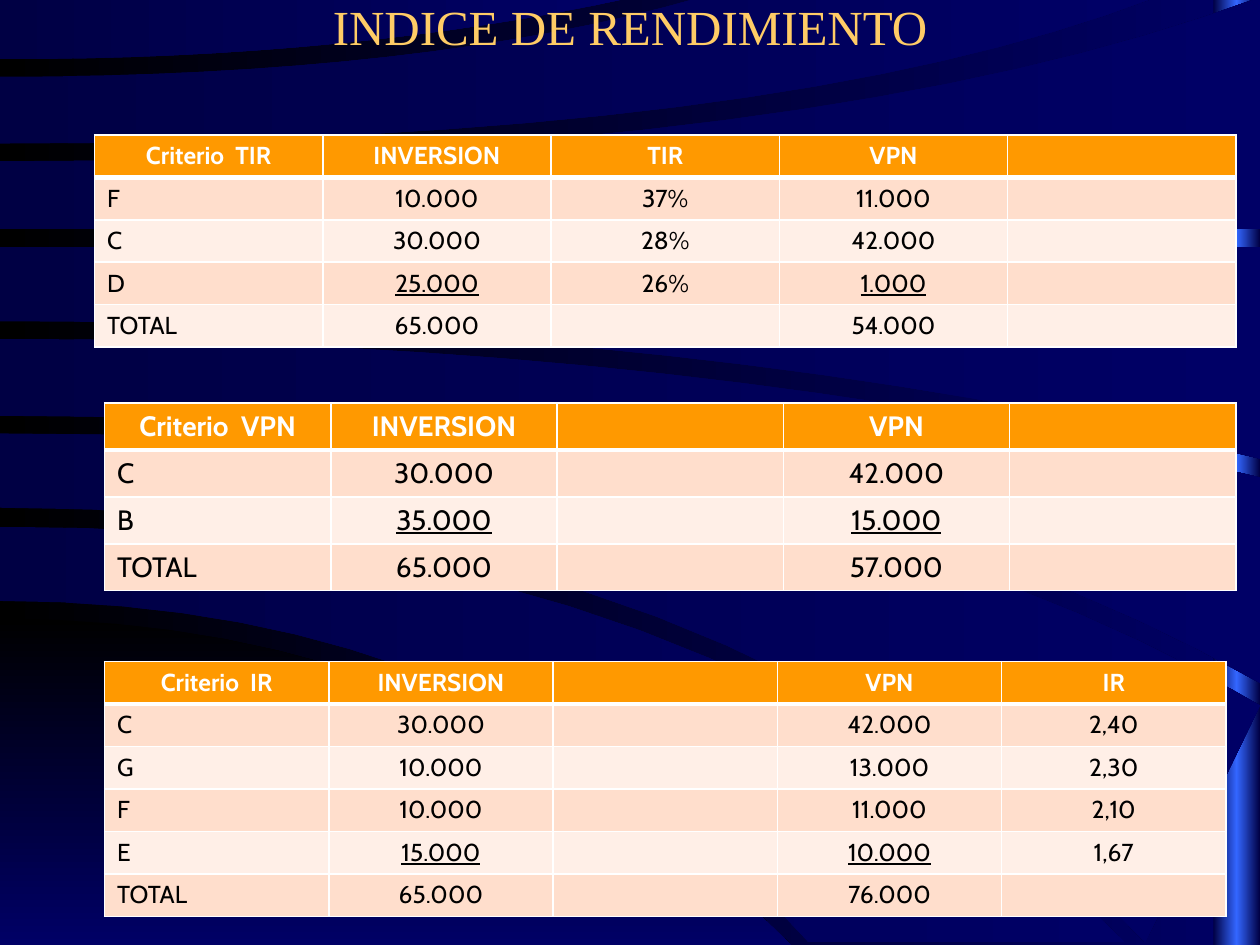
from copy import deepcopy
from lxml.etree import SubElement
from pptx import Presentation
from pptx.dml.color import RGBColor
from pptx.enum.shapes import MSO_SHAPE
from pptx.enum.text import MSO_ANCHOR, PP_ALIGN
from pptx.oxml.ns import qn
from pptx.util import Inches, Pt

COLORS = {
    "black": "000000", "navy": "000044", "deep": "000066", "glow": "3366FF",
    "gold": "FFCC66", "header": "FF9900", "band": "FFDECC", "light": "FFEFE7",
    "white": "FFFFFF",
}
STEPS = 16


def set_gradient(fill, names, angle=0):
    fill.gradient()
    fill.gradient_angle = angle
    stops = fill.gradient_stops
    for i, name in enumerate(names):
        stops[i].color.rgb = RGBColor.from_string(COLORS[name])
        stops[i].position = i / (len(names) - 1)


def arc(start_y, bend_x, end_x, end_y):
    points = []
    for i in range(STEPS + 1):
        t = i / STEPS
        x = 2 * t * (1 - t) * bend_x + t * t * end_x
        y = start_y + t * t * (end_y - start_y)
        points.append((Inches(x), Inches(y)))
    return points


prs = Presentation()
prs.slide_width, prs.slide_height = Inches(10), Inches(7.5)
s = prs.slides.add_slide(prs.slide_layouts[5])
set_gradient(s.background.fill, ["black", "deep"])

edge = s.shapes.add_shape(MSO_SHAPE.RECTANGLE, Inches(9.63), 0, Inches(0.37), Inches(7.5))
edge.shadow.inherit = False
edge.line.fill.background()
edge.fill.gradient()
gs_lst = edge._element.spPr.find(".//" + qn("a:gsLst"))
gs_lst.insert(1, deepcopy(gs_lst[0]))
set_gradient(edge.fill, ["navy", "glow", "navy"])

hill = ((4.91, 3.7, 6.28, 7.5), (7.5, 3, 6.28, 7.5))
waves = [
    ((4.18, 5.7, 8.93, 7.48), (4.77, 4, 6.42, 7.48)),
    ((3.44, 6.4, 10, 5.6), (4.03, 5.87, 9.09, 7.48)),
    ((2.69, 5.5, 10, 3.79), (3.3, 6.3, 10, 5.42)),
    ((1.96, 5, 10, 1.96), (2.55, 5.6, 10, 3.64)),
    ((1.28, 6.5, 10, -0.02), (1.82, 5, 10, 1.82)),
    ((0.61, 3.38, 5.56, -0.02), (1.14, 6.15, 9.17, -0.02)),
    ((-0.02, 2.5, 5.01, -0.02), (0.47, 2.8, 5.01, -0.02)),
]
for upper, lower in [hill] + waves:
    points = arc(*upper) + arc(*lower)[::-1]
    builder = s.shapes.build_freeform(*points[0])
    builder.add_line_segments(points[1:], close=True)
    sp = builder.convert_to_shape()
    sp.shadow.inherit = False
    sp.line.fill.background()
    if upper == hill[0]:
        set_gradient(sp.fill, ["black", "deep"], 270)
    else:
        set_gradient(sp.fill, ["navy", "deep"])

title = s.shapes.title
s.shapes._spTree.append(title._element)
title.left, title.top, title.width, title.height = Inches(0.75), 0, Inches(8.5), Inches(0.41)
tf = title.text_frame
tf.text = "INDICE DE RENDIMIENTO"
tf.vertical_anchor = MSO_ANCHOR.MIDDLE
p = tf.paragraphs[0]
p.alignment = PP_ALIGN.CENTER
font = p.runs[0].font
font.name, font.size = "Times New Roman", Pt(28)
font.color.rgb = RGBColor.from_string(COLORS["gold"])

tables = [
    (0.75, 1.07, 9.06, 1.67, 14, [
        ["Criterio  TIR", "INVERSION", "TIR", "VPN", ""],
        ["F", "10.000", "37%", "11.000", ""],
        ["C", "30.000", "28%", "42.000", ""],
        ["D", "25.000", "26%", "1.000", ""],
        ["TOTAL", "65.000", "", "54.000", ""]]),
    (0.83, 3.2, 8.98, 1.47, 16, [
        ["Criterio  VPN", "INVERSION", "", "VPN", ""],
        ["C", "30.000", "", "42.000", ""],
        ["B", "35.000", "", "15.000", ""],
        ["TOTAL", "65.000", "", "57.000", ""]]),
    (0.83, 5.25, 8.9, 2, 14, [
        ["Criterio  IR", "INVERSION", "", "VPN", "IR"],
        ["C", "30.000", "", "42.000", "2,40"],
        ["G", "10.000", "", "13.000", "2,30"],
        ["F", "10.000", "", "11.000", "2,10"],
        ["E", "15.000", "", "10.000", "1,67"],
        ["TOTAL", "65.000", "", "76.000", ""]]),
]
for left, top, width, height, size, rows in tables:
    table = s.shapes.add_table(len(rows), 5, Inches(left), Inches(top),
                               Inches(width), Inches(height)).table
    for i, row in enumerate(rows):
        for j, text in enumerate(row):
            cell = table.cell(i, j)
            tcPr = cell._tc.get_or_add_tcPr()
            for side in ("lnL", "lnR", "lnT", "lnB"):
                thick = (i == 0 and side == "lnB") or (i == 1 and side == "lnT")
                ln = SubElement(tcPr, qn("a:" + side), w=str(Pt(3 if thick else 1)))
                SubElement(SubElement(ln, qn("a:solidFill")), qn("a:srgbClr"), val=COLORS["white"])
            cell.fill.solid()
            shade = "header" if i == 0 else "band" if i % 2 else "light"
            cell.fill.fore_color.rgb = RGBColor.from_string(COLORS[shade])
            p = cell.text_frame.paragraphs[0]
            if not text:
                SubElement(p._p, qn("a:endParaRPr"), sz=str(size * 100))
                continue
            p.text = text
            p.alignment = PP_ALIGN.CENTER if i == 0 or j else PP_ALIGN.LEFT
            font = p.runs[0].font
            font.name, font.size, font.bold = "Cabin", Pt(size), i == 0
            font.color.rgb = RGBColor.from_string(COLORS["black" if i else "white"])
            if i == len(rows) - 2 and j in (1, 3):
                font.underline = True

prs.save("out.pptx")
